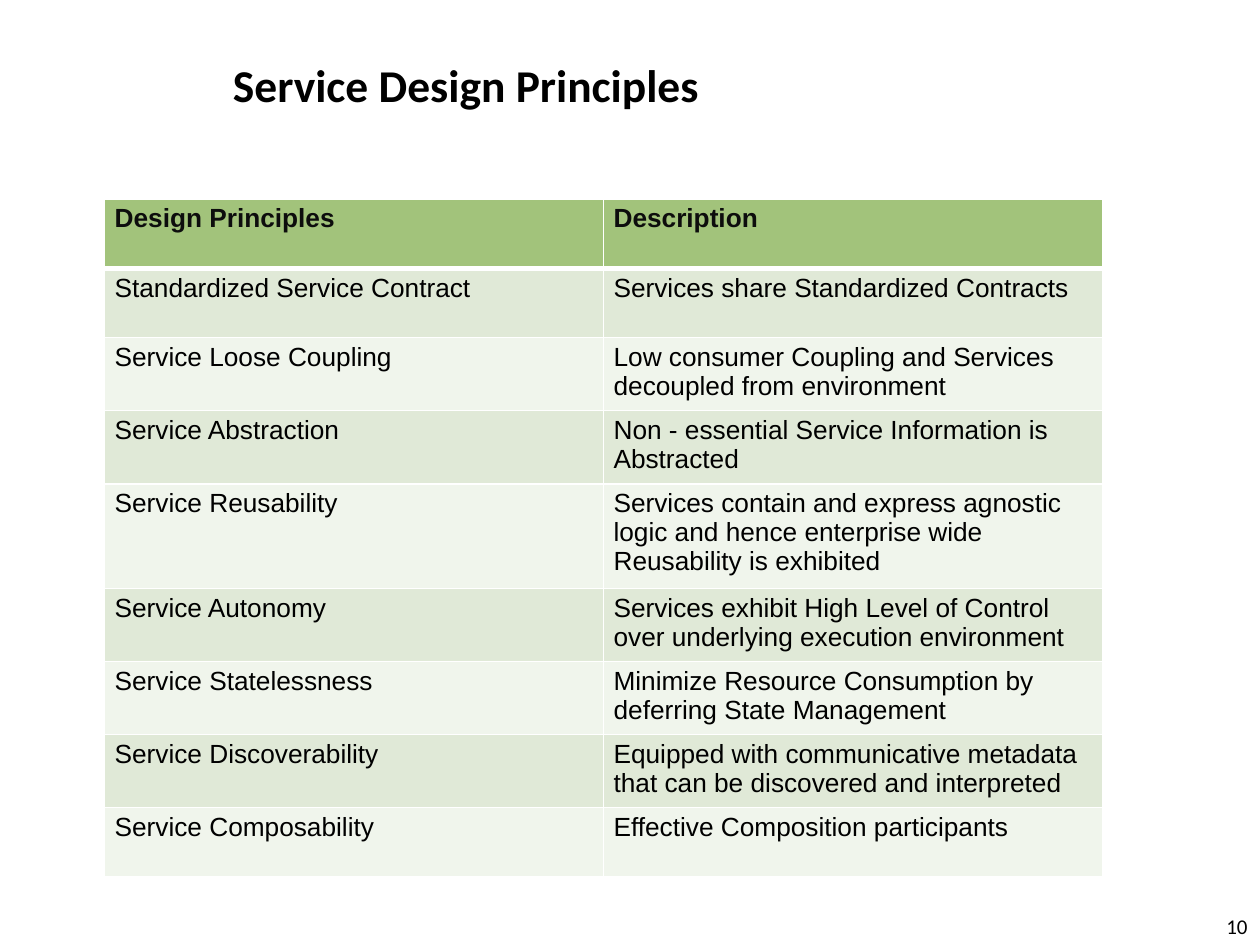
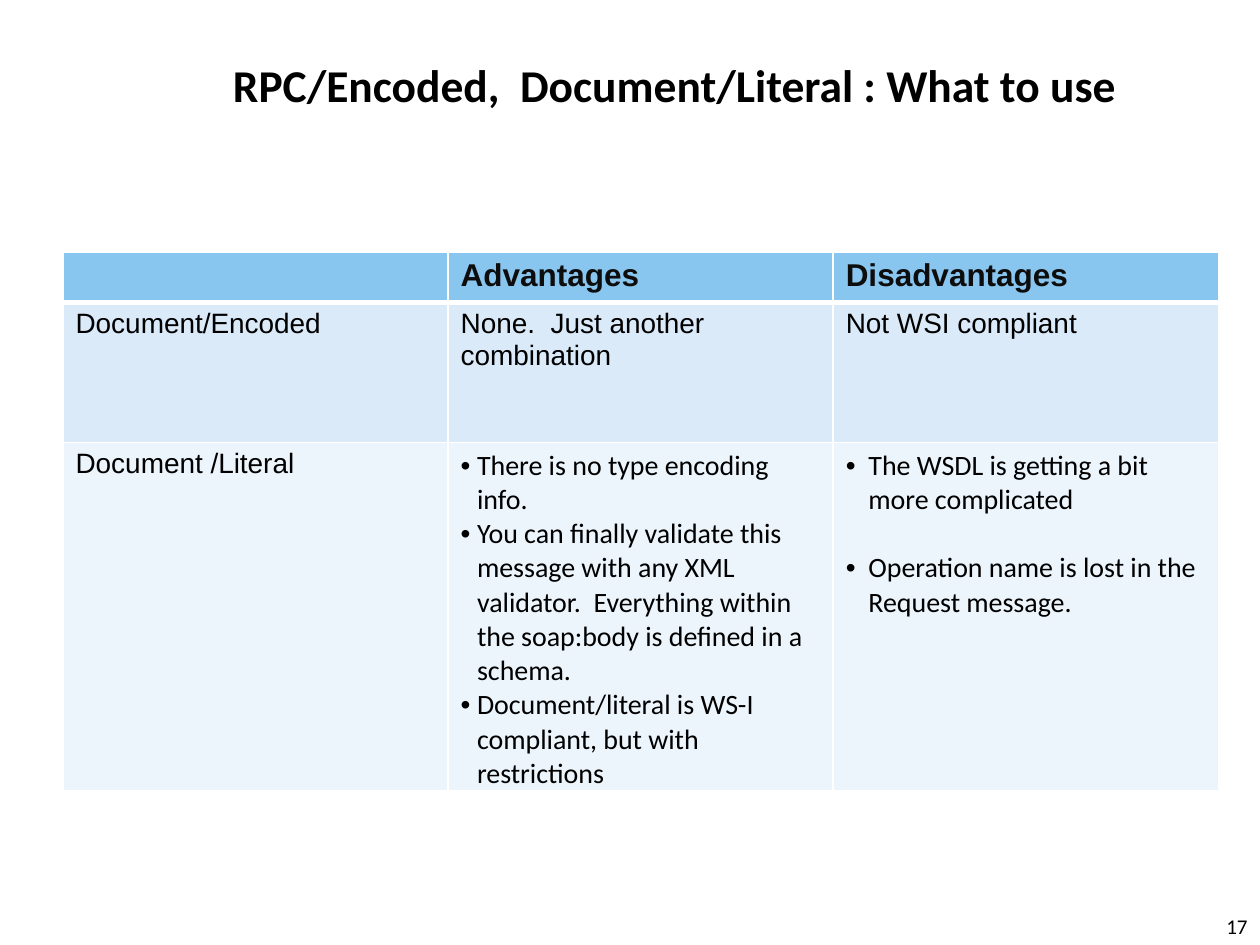
from lxml import etree
from pptx import Presentation
from pptx.dml.color import RGBColor
from pptx.enum.text import MSO_ANCHOR, PP_ALIGN
from pptx.oxml.ns import qn
from pptx.util import Inches, Pt

MIDDLE, BOTTOM = MSO_ANCHOR.MIDDLE, MSO_ANCHOR.BOTTOM
LEFT, RIGHT = PP_ALIGN.LEFT, PP_ALIGN.RIGHT

BLACK = RGBColor(0x00, 0x00, 0x00)
HEADER_TEXT = RGBColor(0x0D, 0x0D, 0x0D)
WHITE = RGBColor(0xFF, 0xFF, 0xFF)
# Each palette holds the header fill and the two alternating row fills.
GREENS = (RGBColor(0xA2, 0xC3, 0x7B), RGBColor(0xE0, 0xE9, 0xD7), RGBColor(0xF0, 0xF5, 0xEC))
BLUES = (RGBColor(0x89, 0xC6, 0xEF), RGBColor(0xDA, 0xEA, 0xF9), RGBColor(0xED, 0xF5, 0xFC))

TITLE_FONT, TABLE_FONT = "Calibri", "Arial"
TITLE_BOX = (1.75, 0.04, 8.25, 1.25)
NUMBER_BOX = (7.67, 6.98, 2.33, 0.52)
THIN, THICK = 1, 3

PRINCIPLES = [
    ("Design Principles", "Description"),
    ("Standardized Service Contract", "Services share Standardized Contracts"),
    ("Service Loose Coupling", "Low consumer Coupling and Services decoupled from environment"),
    ("Service Abstraction", "Non - essential Service Information is Abstracted"),
    ("Service Reusability", "Services contain and express agnostic logic and hence "
                            "enterprise wide Reusability is exhibited"),
    ("Service Autonomy", "Services exhibit High Level of Control over underlying "
                         "execution environment"),
    ("Service Statelessness", "Minimize Resource Consumption by deferring State Management"),
    ("Service Discoverability", "Equipped with communicative metadata that can be "
                                "discovered and interpreted"),
    ("Service Composability", "Effective Composition participants"),
]
LITERAL_ADVANTAGES = [
    "There is no type encoding info.",
    "You can finally validate this message with any XML validator.  "
    "Everything within the soap:body is defined in a schema.",
    "Document/literal is WS-I compliant, but with restrictions",
]
LITERAL_DISADVANTAGES = [
    "The WSDL is getting a bit more complicated",
    "Operation name is lost in the Request message.",
]
ENCODINGS = [
    ("", "Advantages", "Disadvantages"),
    ("Document/Encoded", "None.  Just another combination", "Not WSI compliant"),
    ("Document /Literal", "", ""),
]


def style_font(font, name, size, color=BLACK, bold=False):
    font.name = name
    font.size = Pt(size)
    font.color.rgb = color
    font.bold = bold


def add_text(slide, box, text, size, anchor, alignment=LEFT, bold=False):
    text_frame = slide.shapes.add_textbox(*map(Inches, box)).text_frame
    text_frame.word_wrap = True
    text_frame.vertical_anchor = anchor
    text_frame.text = text
    paragraph = text_frame.paragraphs[0]
    paragraph.alignment = alignment
    style_font(paragraph.font, TITLE_FONT, size, bold=bold)


def add_titled_slide(presentation, title, number):
    slide = presentation.slides.add_slide(presentation.slide_layouts[6])
    slide.background.fill.solid()
    slide.background.fill.fore_color.rgb = WHITE
    add_text(slide, TITLE_BOX, title, 26, MIDDLE, bold=True)
    add_text(slide, NUMBER_BOX, str(number), 12, BOTTOM, RIGHT)
    return slide


def set_borders(cell, top, bottom):
    """Draw white borders, placed ahead of the fill as the schema requires."""
    properties = cell._tc.get_or_add_tcPr()
    widths = {"a:lnL": THIN, "a:lnR": THIN, "a:lnT": top, "a:lnB": bottom}
    for position, (tag, width) in enumerate(widths.items()):
        line = etree.Element(qn(tag), w=str(Pt(width)))
        fill = etree.SubElement(line, qn("a:solidFill"))
        etree.SubElement(fill, qn("a:srgbClr"), val=str(WHITE))
        properties.insert(position, line)


def add_table(slide, box, rows, row_heights, palette, header_size, body_size, margins=None):
    """Fill the box with equal columns, a header row and banded rows."""
    column_count = len(rows[0])
    table = slide.shapes.add_table(len(rows), column_count, *map(Inches, box)).table
    table.first_row = table.horz_banding = False
    for column in table.columns:
        column.width = Inches(box[2] / column_count)
    for row_index, (texts, height) in enumerate(zip(rows, row_heights)):
        table.rows[row_index].height = Inches(height)
        is_header = row_index == 0
        for cell, text in zip(table.rows[row_index].cells, texts):
            cell.fill.solid()
            cell.fill.fore_color.rgb = palette[0 if is_header else 2 - row_index % 2]
            set_borders(cell, THICK if row_index == 1 else THIN, THICK if is_header else THIN)
            if margins:
                cell.margin_left = cell.margin_right = Inches(margins[0])
                cell.margin_top = cell.margin_bottom = Inches(margins[1])
            cell.text = text
            style_font(cell.text_frame.paragraphs[0].font, TABLE_FONT,
                       header_size if is_header else body_size,
                       HEADER_TEXT if is_header else BLACK, is_header)
    return table


def fill_bullets(cell, items, indent, gap=0):
    cell.text = "\n".join(items)
    for index, paragraph in enumerate(cell.text_frame.paragraphs):
        properties = paragraph._p.get_or_add_pPr()
        properties.set("marL", str(Inches(indent)))
        properties.set("indent", str(-Inches(indent)))
        etree.SubElement(properties, qn("a:buFont"), typeface="Arial")
        etree.SubElement(properties, qn("a:buChar"), char="•")
        if index:
            paragraph.space_before = Pt(gap)
        style_font(paragraph.font, TITLE_FONT, 16)


def build_principles_slide(presentation):
    slide = add_titled_slide(presentation, "Service Design Principles", 10)
    heights = [0.55, 0.55, 0.58, 0.58, 0.83, 0.58, 0.58, 0.58, 0.55]
    add_table(slide, (0.83, 1.58, 7.92, 5.4), PRINCIPLES, heights, GREENS, 15, 15, (0.08, 0.04))


def build_encodings_slide(presentation):
    slide = add_titled_slide(presentation, "RPC/Encoded,  Document/Literal : What to use", 17)
    table = add_table(slide, (0.5, 2, 9.17, 4.28), ENCODINGS, [0.33, 1.11, 2.56], BLUES, 18, 16)
    fill_bullets(table.cell(2, 1), LITERAL_ADVANTAGES, 0.13)
    fill_bullets(table.cell(2, 2), LITERAL_DISADVANTAGES, 0.18, gap=19.5)


def main():
    presentation = Presentation()
    presentation.slide_width, presentation.slide_height = Inches(10), Inches(7.5)
    build_principles_slide(presentation)
    build_encodings_slide(presentation)
    presentation.save("out.pptx")


if __name__ == "__main__":
    main()
